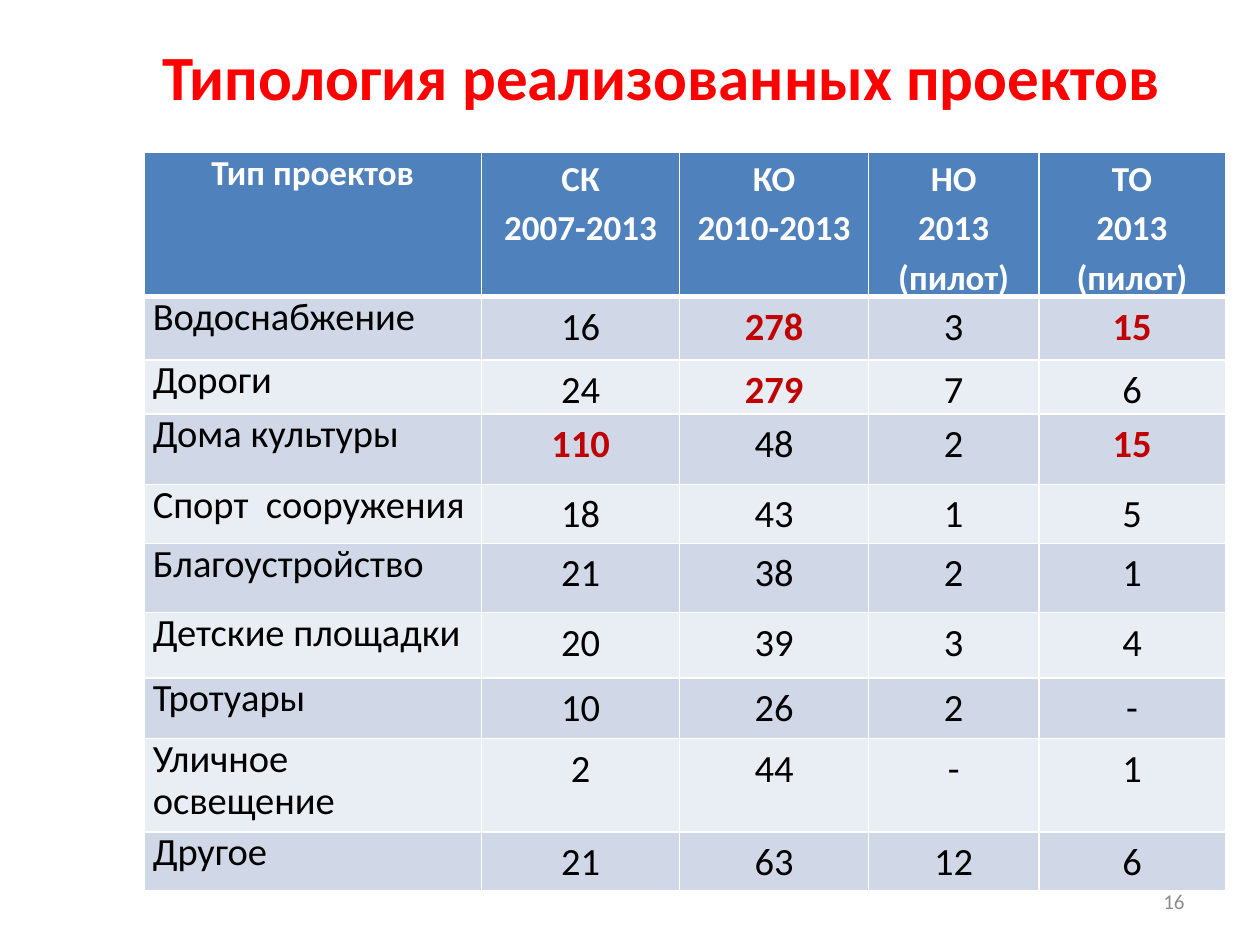
from lxml import etree
from pptx import Presentation
from pptx.dml.color import RGBColor
from pptx.enum.text import MSO_ANCHOR, PP_ALIGN
from pptx.oxml.ns import qn
from pptx.util import Cm, Pt

LEFT, CENTER, RIGHT = PP_ALIGN.LEFT, PP_ALIGN.CENTER, PP_ALIGN.RIGHT
MIDDLE = MSO_ANCHOR.MIDDLE

# Content
TITLE = "Типология реализованных проектов"
PAGE_NUMBER = "16"
# Each heading is a list of paragraphs; "\v" is a line break
HEADINGS = [
    ["Тип проектов"],
    ["СК\v2007-2013"],
    ["КО\v2010-2013"],
    ["НО", "2013 (пилот)"],
    ["ТО", "2013 (пилот)"],
]
PROJECTS = [
    ("Водоснабжение", "16", "278", "3", "15"),
    ("Дороги", "24", "279", "7", "6"),
    ("Дома культуры", "110", "48", "2", "15"),
    ("Спорт  сооружения", "18", "43", "1", "5"),
    ("Благоустройство", "21", "38", "2", "1"),
    ("Детские площадки", "20", "39", "3", "4"),
    ("Тротуары", "10", "26", "2", "-"),
    ("Уличное освещение", "2", "44", "-", "1"),
    ("Другое", "21", "63", "12", "6"),
]
LEADING_COUNTS = {"110", "278", "279", "15"}

# Format
FONT = "Calibri"
COLORS = {
    "title": "FF0000",
    "header": "4F81BD",
    "band_dark": "D0D8E8",
    "band_light": "E9EDF4",
    "white": "FFFFFF",
    "text": "000000",
    "leading": "C00000",
    "page": "8C8C8C",
}
COLUMN_WIDTHS = [6.81, 3.99, 3.81, 3.43, 3.76]
ROW_HEIGHTS = [1.93, 1.27, 1.09, 1.42, 1.19, 1.4, 1.32, 1.22, 1.88, 1.19]


def write(frame, paragraphs, *, size, color, bold=False, align=LEFT, spacing=None):
    frame.word_wrap = True
    for index, line in enumerate(paragraphs):
        paragraph = frame.paragraphs[0] if index == 0 else frame.add_paragraph()
        paragraph.text = line
        paragraph.alignment = align
        if spacing:
            paragraph.line_spacing = spacing
        for run in paragraph.runs:
            run.font.name = FONT
            run.font.size = Pt(size)
            run.font.bold = bold
            run.font.color.rgb = RGBColor.from_string(COLORS[color])


def add_label(slide, text, left, top, width, height, **text_format):
    box = slide.shapes.add_textbox(Cm(left), Cm(top), Cm(width), Cm(height))
    box.text_frame.vertical_anchor = MIDDLE
    write(box.text_frame, [text], **text_format)


def style_cell(cell, fill, top=1, bottom=1):
    cell.margin_left = cell.margin_right = Cm(0.18)
    cell.margin_top = cell.margin_bottom = 0
    properties = cell._tc.get_or_add_tcPr()
    for side, width in (("L", 1), ("R", 1), ("T", top), ("B", bottom)):
        border = etree.SubElement(properties, qn(f"a:ln{side}"), w=str(Pt(width)))
        solid = etree.SubElement(border, qn("a:solidFill"))
        etree.SubElement(solid, qn("a:srgbClr"), val=COLORS["white"])
    cell.fill.solid()
    cell.fill.fore_color.rgb = RGBColor.from_string(COLORS[fill])


def add_project_table(slide):
    table = slide.shapes.add_table(
        len(ROW_HEIGHTS), len(COLUMN_WIDTHS), Cm(2.9), Cm(3.06),
        Cm(sum(COLUMN_WIDTHS)), Cm(sum(ROW_HEIGHTS))).table
    table.horz_banding = False
    for column, width in zip(table.columns, COLUMN_WIDTHS):
        column.width = Cm(width)
    for row, height in zip(table.rows, ROW_HEIGHTS):
        row.height = Cm(height)

    # Header row
    for col, heading in enumerate(HEADINGS):
        cell = table.cell(0, col)
        style_cell(cell, "header", bottom=3)
        write(cell.text_frame, heading, size=20, color="white", bold=True,
              align=CENTER, spacing=1.15 if col else None)

    # Project rows in alternating bands
    for row, project in enumerate(PROJECTS, start=1):
        for col, value in enumerate(project):
            cell = table.cell(row, col)
            style_cell(cell, "band_dark" if row % 2 else "band_light",
                       top=3 if row == 1 else 1)
            leading = value in LEADING_COUNTS
            write(cell.text_frame, [value], size=22,
                  color="leading" if leading else "text", bold=leading,
                  align=CENTER if col else LEFT, spacing=1.15 if col else 0.9)


def main():
    deck = Presentation()
    deck.slide_width, deck.slide_height = Cm(25.4), Cm(19.05)
    slide = deck.slides.add_slide(deck.slide_layouts[6])
    add_label(slide, TITLE, 1.9, 0.53, 22.86, 1.96,
              size=36, color="title", bold=True, align=CENTER)
    add_project_table(slide)
    add_label(slide, PAGE_NUMBER, 18.2, 17.66, 5.93, 1.01,
              size=12, color="page", align=RIGHT)
    deck.save("out.pptx")


if __name__ == "__main__":
    main()
